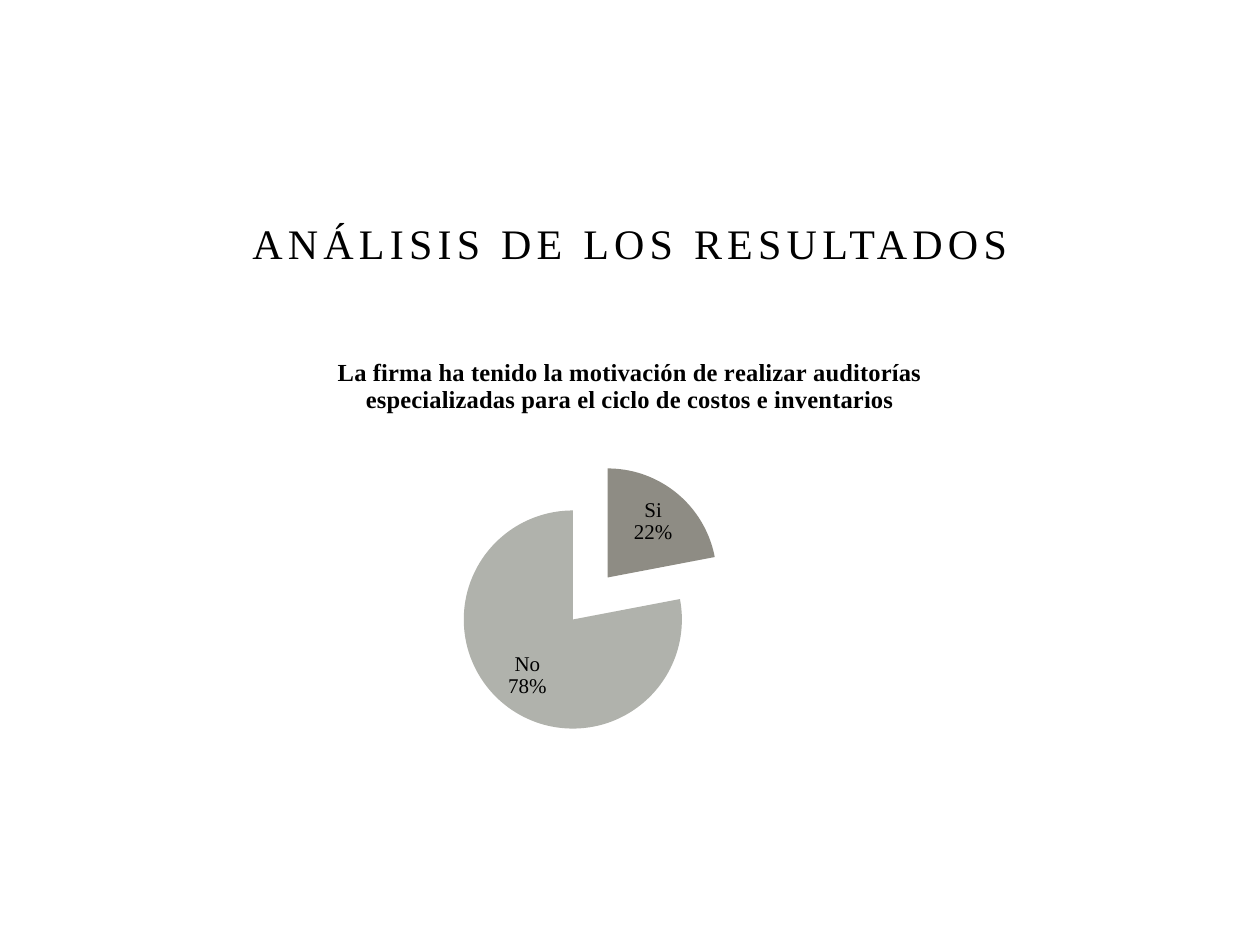
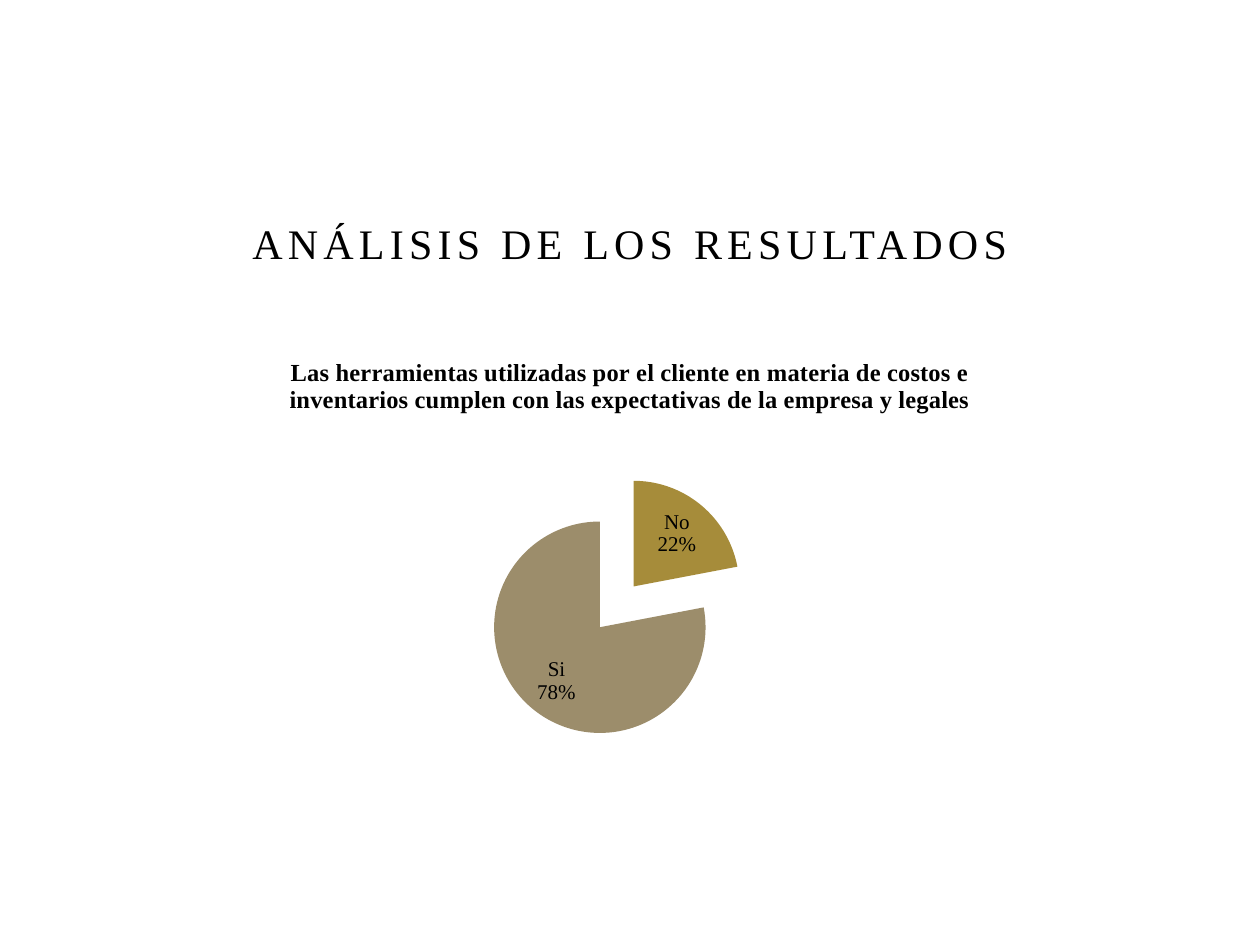
from lxml import etree
from pptx import Presentation
from pptx.chart.data import CategoryChartData
from pptx.dml.color import RGBColor
from pptx.enum.chart import XL_CHART_TYPE, XL_LABEL_POSITION
from pptx.enum.text import MSO_ANCHOR, PP_ALIGN
from pptx.oxml.ns import qn
from pptx.util import Cm, Pt

PIE = XL_CHART_TYPE.PIE
INSIDE = XL_LABEL_POSITION.INSIDE_END
BOTTOM = MSO_ANCHOR.BOTTOM
CENTER = PP_ALIGN.CENTER

# Content
FONT = "Times New Roman"
COLORS = {"ink": "000000", "gray": "8E8C84", "silver": "B0B2AC",
          "gold": "A68C3A", "sand": "9C8D6B"}
HEAD = "ANÁLISIS DE LOS RESULTADOS"
PAGES = [
    {"title": "La firma ha tenido la motivación de realizar auditorías "
              "especializadas para el ciclo de costos e inventarios",
     "parts": [("Si", 22, "gray"), ("No", 78, "silver")],
     "plot": {"x": 0.24, "y": 0.3, "w": 0.43, "h": 0.65}},
    {"title": "Las herramientas utilizadas por el cliente en materia de costos "
              "e inventarios cumplen con las expectativas de la empresa y legales",
     "parts": [("No", 22, "gold"), ("Si", 78, "sand")],
     "plot": {"x": 0.27, "y": 0.33, "w": 0.43, "h": 0.63}},
]

# Shared column
LEFT, WIDTH = Cm(3.81), Cm(17.78)
HEAD_TOP, HEAD_TALL = Cm(3.61), Cm(1.91)
PIE_TOP, PIE_TALL = Cm(6.78), Cm(8.46)
BURST = 25


def set_font(font, size, bold=False):
    font.name, font.size, font.bold = FONT, Pt(size), bold
    font.color.rgb = RGBColor.from_string(COLORS["ink"])


def write(frame, text, size=12, bold=False, gap=0):
    para = frame.paragraphs[0]
    para.alignment = CENTER
    run = para.add_run()
    run.text = text
    set_font(run.font, size, bold)
    if gap:
        run.font._element.set("spc", str(gap * 100))


def add_val(parent, tag, val):
    etree.SubElement(parent, qn(tag)).set("val", str(val))


def place_plot(chart, box):
    area = chart._chartSpace.chart.plotArea
    for old in area.findall(qn("c:layout")):
        area.remove(old)
    layout = etree.Element(qn("c:layout"))
    area.insert(0, layout)
    manual = etree.SubElement(layout, qn("c:manualLayout"))
    add_val(manual, "c:layoutTarget", "inner")
    for side in "xy":
        add_val(manual, f"c:{side}Mode", "edge")
    for side, val in box.items():
        add_val(manual, f"c:{side}", val)


def add_pie(slide, page):
    names, vals, tints = zip(*page["parts"])
    data = CategoryChartData()
    data.categories = names
    data.add_series("Series 1", vals)
    chart = slide.shapes.add_chart(PIE, LEFT, PIE_TOP, WIDTH, PIE_TALL, data).chart
    set_font(chart.font, 10)
    chart.has_legend = False
    chart.has_title = True
    write(chart.chart_title.text_frame, page["title"], size=14, bold=True)
    chart.chart_title.include_in_layout = False
    place_plot(chart, page["plot"])
    plot = chart.plots[0]
    plot.vary_by_categories = True

    # Slices, pulled apart
    series = plot.series[0]
    burst = etree.Element(qn("c:explosion"))
    burst.set("val", str(BURST))
    series._element.find(qn("c:tx")).addnext(burst)
    for i, tint in enumerate(tints):
        look = series.points[i].format
        look.fill.solid()
        look.fill.fore_color.rgb = RGBColor.from_string(COLORS[tint])
        look.line.fill.background()

    # Labels
    labels = series.data_labels
    set_font(labels.font, 12)
    labels.number_format, labels.number_format_is_linked = "0%", False
    labels.position = INSIDE
    labels.show_value = False
    labels.show_category_name = labels.show_percentage = True
    split = etree.Element(qn("c:separator"))
    split.text = "\n"
    labels._element.find(qn("c:showBubbleSize")).addnext(split)


def add_head(slide):
    head = slide.shapes.title
    head.left, head.top, head.width, head.height = LEFT, HEAD_TOP, WIDTH, HEAD_TALL
    head.text_frame.vertical_anchor = BOTTOM
    head.text_frame.word_wrap = True
    write(head.text_frame, HEAD, size=24, gap=3)


def main():
    deck = Presentation()
    deck.slide_width, deck.slide_height = Cm(25.4), Cm(19.05)
    for page in PAGES:
        slide = deck.slides.add_slide(deck.slide_layouts[5])
        add_head(slide)
        add_pie(slide, page)
    deck.save("out.pptx")


if __name__ == "__main__":
    main()
